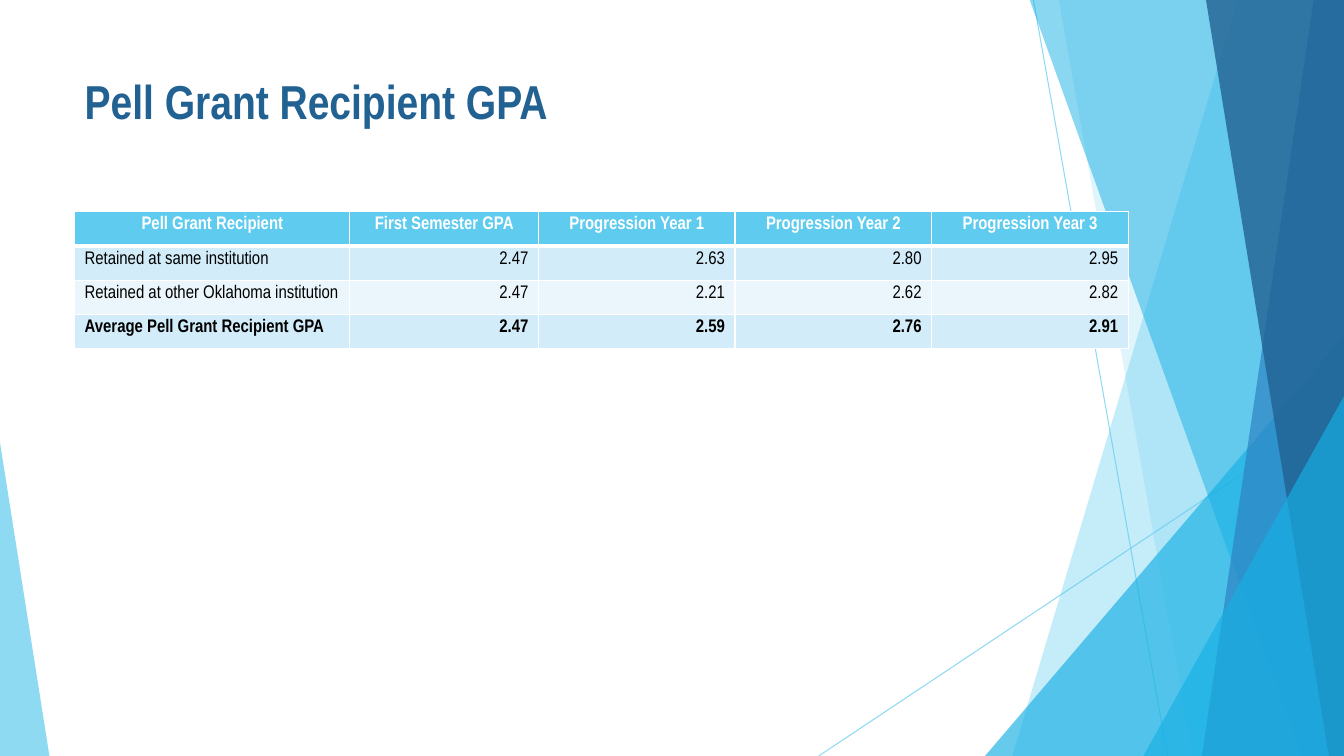
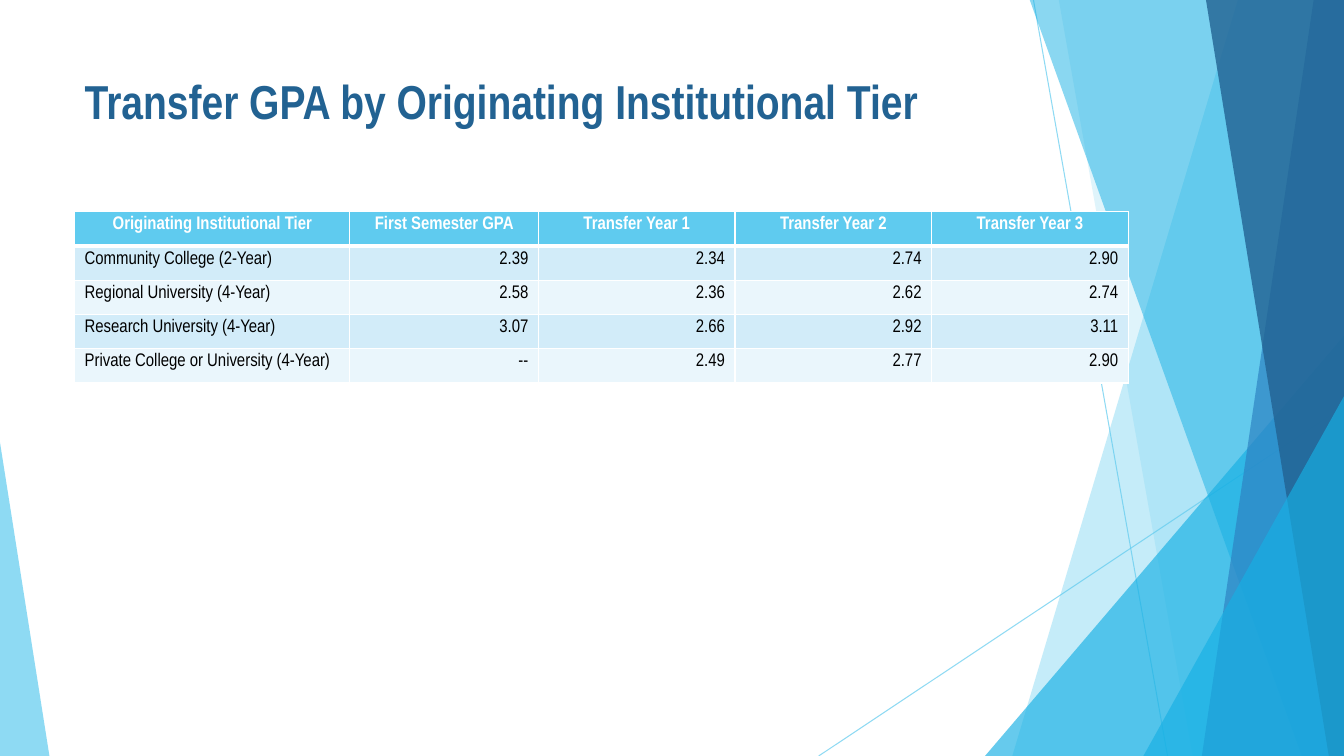
"""Build two GPA table slides on a shared faceted background."""
from pptx import Presentation
from pptx.dml.color import RGBColor
from pptx.enum import shapes, text
from pptx.oxml import parse_xml
from pptx.oxml.ns import nsdecls, qn
from pptx.util import Inches, Pt

FONT = "Arial Narrow"
COLORS = {
    "sky": "5FCBEF", "azure": "17B0E4", "blue": "2E83C3", "navy": "226292",
    "band_dark": "D2ECF9", "band_light": "EAF6FC", "white": "FFFFFF", "black": "000000",
}
WIDTH, HEIGHT, BLEED = 13.33, 7.5, -0.01
FACETS = [
    ("edge", (12.28, 10.04), "sky", 36),
    ("edge", (10.5, 11.83), "sky", 20),
    ("corner", (9.77, 3.33, 3.56, 1), "azure", 66),
    ("edge", (10.21, 12.91), "azure", 50),
    ("edge", (13.03, 11.92), "blue", 70),
    ("edge", (11.96, 13.18), "navy", 80),
    ("corner", (11.34, 3.93, 1.99, 1), "azure", 66),
    ("corner", (0, 4.39, 0.49, 0), "sky", 70),
]
RAYS = [(10.25, 0, 11.58, HEIGHT), (WIDTH, 4.03, 8.12, HEIGHT)]
COLUMN_WIDTHS = [2.73, 1.87, 1.95, 1.95, 1.95]
ROW_HEIGHT = 0.34
CONTENT = [
    ("Pell Grant Recipient GPA", [
        ["Pell Grant Recipient", "First Semester GPA",
         "Progression Year 1", "Progression Year 2", "Progression Year 3"],
        ["Retained at same institution", "2.47", "2.63", "2.80", "2.95"],
        ["Retained at other Oklahoma institution", "2.47", "2.21", "2.62", "2.82"],
        ["Average Pell Grant Recipient GPA", "2.47", "2.59", "2.76", "2.91"],
    ]),
    ("Transfer GPA by Originating Institutional Tier", [
        ["Originating Institutional Tier", "First Semester GPA",
         "Transfer Year 1", "Transfer Year 2", "Transfer Year 3"],
        ["Community College (2-Year)", "2.39", "2.34", "2.74", "2.90"],
        ["Regional University (4-Year)", "2.58", "2.36", "2.62", "2.74"],
        ["Research University (4-Year)", "3.07", "2.66", "2.92", "3.11"],
        ["Private College or University (4-Year)", "--", "2.49", "2.77", "2.90"],
    ]),
]


def set_opacity(part, percent):
    for color in part.element.spPr.iter(qn("a:srgbClr")):
        color.append(parse_xml(f'<a:alpha {nsdecls("a")} val="{percent * 1000}"/>'))


def style_text(paragraph, size, color, bold, align):
    paragraph.alignment = align
    paragraph.font.name = FONT
    paragraph.font.size = Pt(size)
    paragraph.font.bold = bold
    paragraph.font.color.rgb = RGBColor.from_string(COLORS[color])


prs = Presentation()
prs.slide_width, prs.slide_height = Inches(WIDTH), Inches(HEIGHT)
layout = prs.slide_layouts[5]
for footer in list(layout.placeholders)[1:]:
    footer.element.getparent().remove(footer.element)
slides = [prs.slides.add_slide(layout) for _ in CONTENT]

canvas = slides[0].shapes
background = []
for ends in RAYS:
    ray = canvas.add_connector(shapes.MSO_CONNECTOR.STRAIGHT, *map(Inches, ends))
    ray.line.color.rgb = RGBColor.from_string(COLORS["sky"])
    ray.line.width = Pt(0.75)
    ray.element.spPr.append(parse_xml(f'<a:effectLst {nsdecls("a")}/>'))
    set_opacity(ray, 70)
    background.append(ray)
for kind, geometry, color, opacity in FACETS:
    if kind == "edge":
        top_x, bottom_x = geometry
        outline = canvas.build_freeform(Inches(top_x), Inches(BLEED))
        corners = [(WIDTH, BLEED), (WIDTH, HEIGHT), (bottom_x, HEIGHT)]
        outline.add_line_segments([(Inches(x), Inches(y)) for x, y in corners], close=True)
        facet = outline.convert_to_shape()
    else:
        left, top, width, apex = geometry
        facet = canvas.add_shape(shapes.MSO_SHAPE.ISOSCELES_TRIANGLE, Inches(left),
                                 Inches(top), Inches(width), Inches(HEIGHT - top))
        facet.adjustments[0] = apex
    facet.fill.solid()
    facet.fill.fore_color.rgb = RGBColor.from_string(COLORS[color])
    facet.line.fill.background()
    facet.shadow.inherit = False
    set_opacity(facet, opacity)
    background.append(facet)
for part in background:
    layout.shapes.element.append(part.element)

for slide, (heading, rows) in zip(slides, CONTENT):
    title = slide.shapes.title
    title.left, title.top = Inches(0.74), Inches(0.66)
    title.width, title.height = Inches(9.4), Inches(1.44)
    title.text_frame.text = heading
    title.text_frame.vertical_anchor = text.MSO_ANCHOR.TOP
    style_text(title.text_frame.paragraphs[0], 34, "navy", True, text.PP_ALIGN.LEFT)

    gpa_table = slide.shapes.add_table(
        len(rows), len(COLUMN_WIDTHS), Inches(0.74), Inches(2.1),
        Inches(sum(COLUMN_WIDTHS)), Inches(ROW_HEIGHT * len(rows))).table
    for column, width in zip(gpa_table.columns, COLUMN_WIDTHS):
        column.width = Inches(width)
    for r, row in enumerate(rows):
        gpa_table.rows[r].height = Inches(ROW_HEIGHT)
        header = r == 0
        band = "sky" if header else "band_dark" if r % 2 else "band_light"
        bold = header or row[0].startswith("Average")
        for c, value in enumerate(row):
            cell = gpa_table.cell(r, c)
            cell.text = value
            cell.margin_top = cell.margin_bottom = Inches(0.05)
            if header:
                align = text.PP_ALIGN.CENTER
            else:
                align = text.PP_ALIGN.RIGHT if c else text.PP_ALIGN.LEFT
            style_text(cell.text_frame.paragraphs[0], 13,
                       "white" if header else "black", bold, align)
            for side in "LRTB":
                thick = (r, side) in [(0, "B"), (1, "T")]
                cell._tc.get_or_add_tcPr().append(parse_xml(
                    f'<a:ln{side} {nsdecls("a")} w="{Pt(3 if thick else 1)}"><a:solidFill>'
                    f'<a:srgbClr val="{COLORS["white"]}"/></a:solidFill></a:ln{side}>'))
            cell.fill.solid()
            cell.fill.fore_color.rgb = RGBColor.from_string(COLORS[band])

prs.save("out.pptx")
